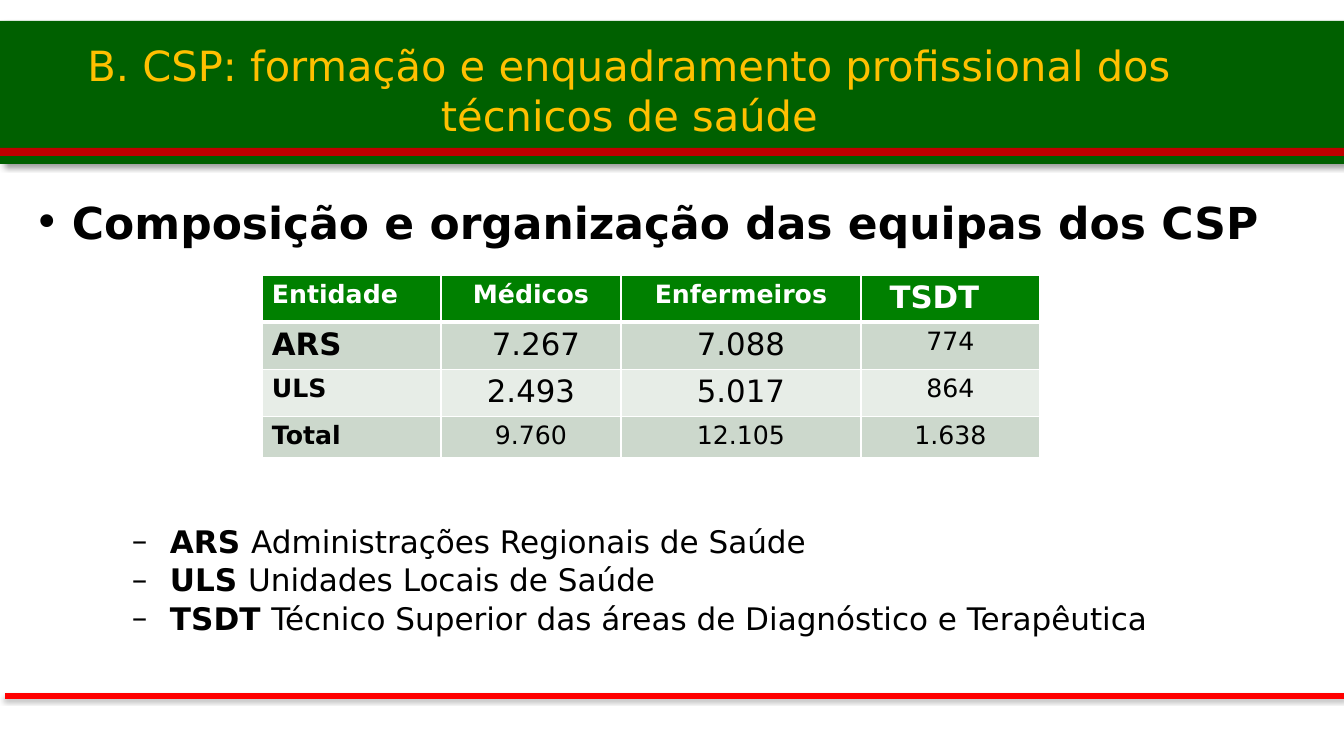
from lxml import etree
from pptx import Presentation
from pptx.dml.color import RGBColor
from pptx.enum.shapes import MSO_SHAPE
from pptx.enum.text import MSO_ANCHOR, PP_ALIGN
from pptx.oxml.ns import qn
from pptx.util import Emu, Pt

RECT = MSO_SHAPE.RECTANGLE
TOP, MIDDLE = MSO_ANCHOR.TOP, MSO_ANCHOR.MIDDLE
LEFT, CENTER, JUSTIFY = PP_ALIGN.LEFT, PP_ALIGN.CENTER, PP_ALIGN.JUSTIFY

FONT = "DejaVu Sans"
BLACK = RGBColor(0, 0, 0)
WHITE = RGBColor(255, 255, 255)
GOLD = RGBColor(0xFF, 0xC0, 0x00)
FOREST = RGBColor(0x00, 0x60, 0x00)
GREEN = RGBColor(0x00, 0x80, 0x00)
CRIMSON = RGBColor(0xC0, 0x00, 0x00)
RED = RGBColor(0xFF, 0x00, 0x00)
SAGE = RGBColor(0xCC, 0xD8, 0xCC)
PALE = RGBColor(0xE7, 0xED, 0xE7)

ROWS = [
    ["Entidade", "Médicos", "Enfermeiros", "TSDT"],
    ["ARS", "7.267", "7.088", "774"],
    ["ULS", "2.493", "5.017", "864"],
    ["Total", "9.760", "12.105", "1.638"],
]
WIDTHS = [179, 180, 240, 179]
HEIGHTS = [46, 46, 46, 41]
LARGE = {(0, 3), (1, 0), (1, 1), (1, 2), (2, 1), (2, 2)}
SHIFTS = {(0, 3): -16, (1, 1): 5}
TERMS = [
    ("ARS", "Administrações Regionais de Saúde"),
    ("ULS", "Unidades Locais de Saúde"),
    ("TSDT", "Técnico Superior das áreas de Diagnóstico e Terapêutica"),
]


def px(count):
    """Turn whole pixels into EMU."""
    return Emu(round(count * 914400 / 100.8))


def add_xml(parent, tag, **attrs):
    """Append a drawing element with the given attributes."""
    node = etree.SubElement(parent, qn(tag))
    for key, value in attrs.items():
        node.set(key, str(value))
    return node


def write(para, *runs, size, color=BLACK, align=LEFT, bullet=None, indent=0, hang=0, before=0):
    """Fill a paragraph with (text, bold) runs in one format."""
    para.alignment = align
    if before:
        para.space_before = Pt(before)
    if bullet:
        props = para._p.get_or_add_pPr()
        props.set("marL", str(px(indent)))
        props.set("indent", str(-px(hang)))
        add_xml(props, "a:buFont", typeface=FONT)
        add_xml(props, "a:buChar", char=bullet)
    for text, bold in runs:
        run = para.add_run()
        run.text = text
        run.font.name = FONT
        run.font.size = Pt(size)
        run.font.bold = bold
        run.font.color.rgb = color


def add_bar(slide, left, top, width, height, color, shadow=None):
    """Draw a plain bar; shadow is opacity, blur, distance and angle."""
    bar = slide.shapes.add_shape(RECT, px(left), px(top), px(width), px(height))
    bar.fill.solid()
    bar.fill.fore_color.rgb = color
    bar.line.fill.background()
    bar.shadow.inherit = False
    if shadow:
        alpha, blur, dist, angle = shadow
        effects = bar._element.spPr.find(qn("a:effectLst"))
        outer = add_xml(effects, "a:outerShdw", blurRad=Pt(blur), dist=Pt(dist),
                        dir=angle * 60000, algn="ctr", rotWithShape=0)
        tint = add_xml(outer, "a:srgbClr", val=BLACK)
        add_xml(tint, "a:alpha", val=alpha * 1000)


def add_box(slide, left, top, width, height, anchor=TOP):
    """Add a wrapping text box and return its frame."""
    frame = slide.shapes.add_textbox(px(left), px(top), px(width), px(height)).text_frame
    frame.word_wrap = True
    frame.vertical_anchor = anchor
    frame.margin_left = frame.margin_right = px(12)
    frame.margin_top = frame.margin_bottom = px(6)
    return frame


def edge_cell(cell, row):
    """Give a cell white borders, thick under the header."""
    props = cell._tc.get_or_add_tcPr()
    widths = {"L": 1, "R": 1, "T": 3 if row == 1 else 1, "B": 3 if row == 0 else 1}
    for side, width in widths.items():
        line = add_xml(props, f"a:ln{side}", w=Pt(width))
        add_xml(add_xml(line, "a:solidFill"), "a:srgbClr", val=WHITE)


def add_staff(slide, left, top):
    """Add the table of staff by entity."""
    table = slide.shapes.add_table(len(ROWS), len(WIDTHS), px(left), px(top),
                                   px(sum(WIDTHS)), px(sum(HEIGHTS))).table
    for column, width in zip(table.columns, WIDTHS):
        column.width = px(width)
    for row, (height, texts) in enumerate(zip(HEIGHTS, ROWS)):
        table.rows[row].height = px(height)
        for col, text in enumerate(texts):
            cell = table.cell(row, col)
            edge_cell(cell, row)
            cell.fill.solid()
            cell.fill.fore_color.rgb = GREEN if row == 0 else SAGE if row % 2 else PALE
            shift = SHIFTS.get((row, col), 0)
            cell.margin_left = px(10 + 2 * max(shift, 0))
            cell.margin_right = px(10 + 2 * max(-shift, 0))
            write(cell.text_frame.paragraphs[0], (text, row == 0 or col == 0),
                  size=22 if (row, col) in LARGE else 18,
                  color=BLACK if row else WHITE, align=CENTER if col else LEFT)


def add_terms(slide):
    """List the meaning of each short form."""
    frame = add_box(slide, 22, 516, 1294, 126)
    for index, (short, name) in enumerate(TERMS):
        para = frame.add_paragraph() if index else frame.paragraphs[0]
        write(para, (f"{short} ", True), (name, False), size=22.2, align=JUSTIFY,
              bullet="–", indent=136, hang=38, before=1 if index else 0)


def main():
    """Build and save the slide."""
    deck = Presentation()
    deck.slide_width, deck.slide_height = px(1344), px(756)
    slide = deck.slides.add_slide(deck.slide_layouts[6])
    add_bar(slide, 0, 21, 1344, 143, FOREST, shadow=(40, 4, 3, 45))
    add_bar(slide, 0, 148, 1344, 8, CRIMSON)
    add_bar(slide, 5, 693, 1339, 6, RED, shadow=(35, 3.1, 1.8, 90))
    title = add_box(slide, 40, 39, 1179, 102, MIDDLE)
    write(title.paragraphs[0],
          ("B. CSP: formação e enquadramento profissional dos técnicos de saúde", False),
          size=29.7, color=GOLD, align=CENTER)
    head = add_box(slide, 22, 190, 1294, 64)
    write(head.paragraphs[0], ("Composição e organização das equipas dos CSP", True),
          size=31.4, align=JUSTIFY, bullet="•", indent=38, hang=38)
    add_staff(slide, 262, 275)
    add_terms(slide)
    deck.save("out.pptx")


if __name__ == "__main__":
    main()
